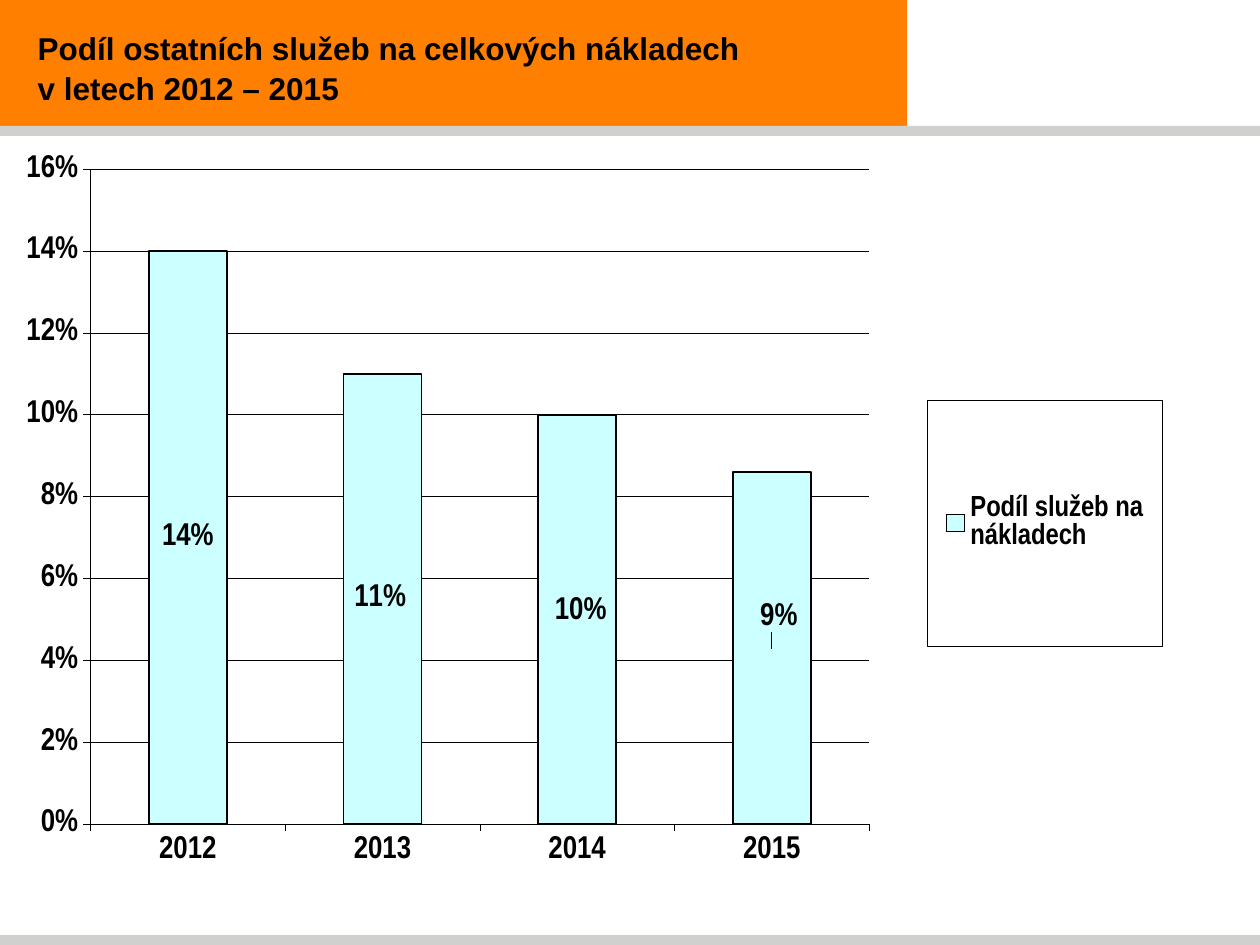
from lxml import etree
from pptx import Presentation
from pptx.chart.data import CategoryChartData
from pptx.dml.color import RGBColor
from pptx.enum.chart import (XL_CHART_TYPE, XL_LABEL_POSITION, XL_LEGEND_POSITION,
                             XL_TICK_LABEL_POSITION, XL_TICK_MARK)
from pptx.enum.shapes import MSO_SHAPE
from pptx.enum.text import MSO_ANCHOR, MSO_AUTO_SIZE, PP_ALIGN
from pptx.oxml.ns import qn
from pptx.util import Cm, Pt

ORANGE = RGBColor(0xFF, 0x80, 0x01)
GREY = RGBColor(0xD0, 0xD0, 0xCE)
BLACK = RGBColor(0, 0, 0)
PALE_CYAN = RGBColor(0xCC, 0xFF, 0xFF)

RECTANGLE = MSO_SHAPE.RECTANGLE
STACKED = XL_CHART_TYPE.COLUMN_STACKED
OUTSIDE, NO_TICK = XL_TICK_MARK.OUTSIDE, XL_TICK_MARK.NONE
LOW = XL_TICK_LABEL_POSITION.LOW
CENTER = XL_LABEL_POSITION.CENTER
RIGHT = XL_LEGEND_POSITION.RIGHT
MIDDLE = MSO_ANCHOR.MIDDLE
LEFT = PP_ALIGN.LEFT
NO_FIT = MSO_AUTO_SIZE.NONE

SLIDE_WIDTH, SLIDE_HEIGHT = 25.4, 19.05
HEADER_WIDTH, HEADER_HEIGHT = 18.29, 2.54
BAND_HEIGHT = 0.2
PERCENT = "0%"


def format_font(font, name="Arial Narrow", size=18, bold=True, color=BLACK):
    font.name, font.size, font.bold = name, Pt(size), bold
    font.color.rgb = color


def write_text(frame, text, line_spacing=1.0, **font_format):
    paragraph = frame.paragraphs[0]
    paragraph.text = text
    paragraph.alignment = LEFT
    paragraph.line_spacing = line_spacing
    for run in paragraph.runs:
        format_font(run.font, **font_format)


def format_line(line, width=0.25):
    line.color.rgb = BLACK
    line.width = Pt(width)


def manual_layout(**settings):
    """Build a c:layout element from fractions of the chart area."""
    layout = etree.Element(qn("c:layout"))
    manual = etree.SubElement(layout, qn("c:manualLayout"))
    for name, value in settings.items():
        etree.SubElement(manual, qn("c:" + name)).set("val", str(value))
    return layout


def place(parent, layout, after=None):
    """Replace the layout of a chart part, keeping the schema order."""
    for old in parent.findall(qn("c:layout")):
        parent.remove(old)
    previous = parent.find(qn(after)) if after else None
    if previous is None:
        parent.insert(0, layout)
    else:
        previous.addnext(layout)


class SlideBuilder:
    def __init__(self, slide):
        self.slide = slide

    def bar(self, left, top, width, height, color):
        shape = self.slide.shapes.add_shape(
            RECTANGLE, Cm(left), Cm(top), Cm(width), Cm(height))
        shape.shadow.inherit = False
        shape.fill.solid()
        shape.fill.fore_color.rgb = color
        shape.line.fill.background()

    def title(self, text, left, top, width, height):
        title = self.slide.shapes.title
        title.left, title.top = Cm(left), Cm(top)
        title.width, title.height = Cm(width), Cm(height)
        frame = title.text_frame
        frame.word_wrap = True
        frame.auto_size = NO_FIT
        frame.vertical_anchor = MIDDLE
        frame.margin_left = Cm(0.76)
        write_text(frame, text, line_spacing=1.05, name="Arial")
        # Bring the title in front of the header bar
        self.slide.shapes._spTree.append(title._element)

    def column_chart(self, name, shares, label_shifts, left, top, width, height):
        data = CategoryChartData(number_format=PERCENT)
        data.categories = list(shares)
        data.add_series(name, list(shares.values()))
        chart = self.slide.shapes.add_chart(
            STACKED, Cm(left), Cm(top), Cm(width), Cm(height), data).chart
        chart.has_title = False
        format_font(chart.font)
        plot = chart.plots[0]
        plot.gap_width, plot.overlap = 150, 100
        plot.vary_by_categories = False
        place(chart._chartSpace.chart.plotArea, manual_layout(
            layoutTarget="inner", xMode="edge", yMode="edge",
            x=0.07, y=0.019, w=0.656, h=0.874))
        self.axes(chart)
        self.legend(chart)
        self.series(plot.series[0], label_shifts)

    def axes(self, chart):
        for axis in (chart.category_axis, chart.value_axis):
            axis.major_tick_mark, axis.minor_tick_mark = OUTSIDE, NO_TICK
            format_font(axis.tick_labels.font)
            format_line(axis.format.line)
        chart.category_axis.tick_label_position = LOW
        axis = chart.value_axis
        axis.minimum_scale, axis.maximum_scale, axis.major_unit = 0, 0.16, 0.02
        axis.tick_labels.number_format = PERCENT
        axis.tick_labels.number_format_is_linked = False
        axis.has_major_gridlines = True
        format_line(axis.major_gridlines.format.line)

    def legend(self, chart):
        chart.has_legend = True
        legend = chart.legend
        legend.position = RIGHT
        legend.include_in_layout = False
        format_font(legend.font, size=16.6)
        element = legend._element
        place(element, manual_layout(xMode="edge", yMode="edge",
                                     x=0.775, y=0.327, w=0.198, h=0.329),
              after="c:legendPos")
        # Thin frame round the legend
        frame = etree.Element(qn("c:spPr"))
        line = etree.SubElement(frame, qn("a:ln"), w=str(Pt(0.25)))
        fill = etree.SubElement(line, qn("a:solidFill"))
        etree.SubElement(fill, qn("a:srgbClr"), val=str(BLACK))
        element.find(qn("c:txPr")).addprevious(frame)

    def series(self, series, label_shifts):
        series.format.fill.solid()
        series.format.fill.fore_color.rgb = PALE_CYAN
        format_line(series.format.line, width=1)
        labels = series.data_labels
        labels.show_value = True
        labels.number_format = PERCENT
        labels.number_format_is_linked = False
        labels.position = CENTER
        format_font(labels.font)
        # Labels moved away from the middle of their columns
        for index, (x, y) in label_shifts.items():
            label = series.points[index].data_label
            format_font(label.font)
            label.position = CENTER
        for element in labels._element.findall(qn("c:dLbl")):
            index = int(element.find(qn("c:idx")).get("val"))
            x, y = label_shifts[index]
            layout = manual_layout(x=x, y=y)
            place(element, layout, after="c:idx")
            number_format = etree.Element(
                qn("c:numFmt"), formatCode=PERCENT, sourceLinked="0")
            layout.addnext(number_format)


def main():
    presentation = Presentation()
    presentation.slide_width = Cm(SLIDE_WIDTH)
    presentation.slide_height = Cm(SLIDE_HEIGHT)
    builder = SlideBuilder(
        presentation.slides.add_slide(presentation.slide_layouts[5]))

    # Header and the grey bands
    builder.bar(0, 0, HEADER_WIDTH, HEADER_HEIGHT, ORANGE)
    for top in (SLIDE_HEIGHT - BAND_HEIGHT, HEADER_HEIGHT):
        builder.bar(0, top, SLIDE_WIDTH, BAND_HEIGHT, GREY)
    builder.title("Podíl ostatních služeb na celkových nákladech\vv letech 2012 – 2015",
                  0, 0.48, HEADER_WIDTH, 1.73)

    # Share of services by year
    builder.column_chart(
        "Podíl služeb na nákladech",
        {"2012": 0.14, "2013": 0.11, "2014": 0.1, "2015": 0.086},
        {1: (-0.002, 0), 2: (0.003, -0.01), 3: (0.006, -0.04)},
        0.15, 3.12, 23.93, 15.11)

    presentation.save("out.pptx")


if __name__ == "__main__":
    main()
